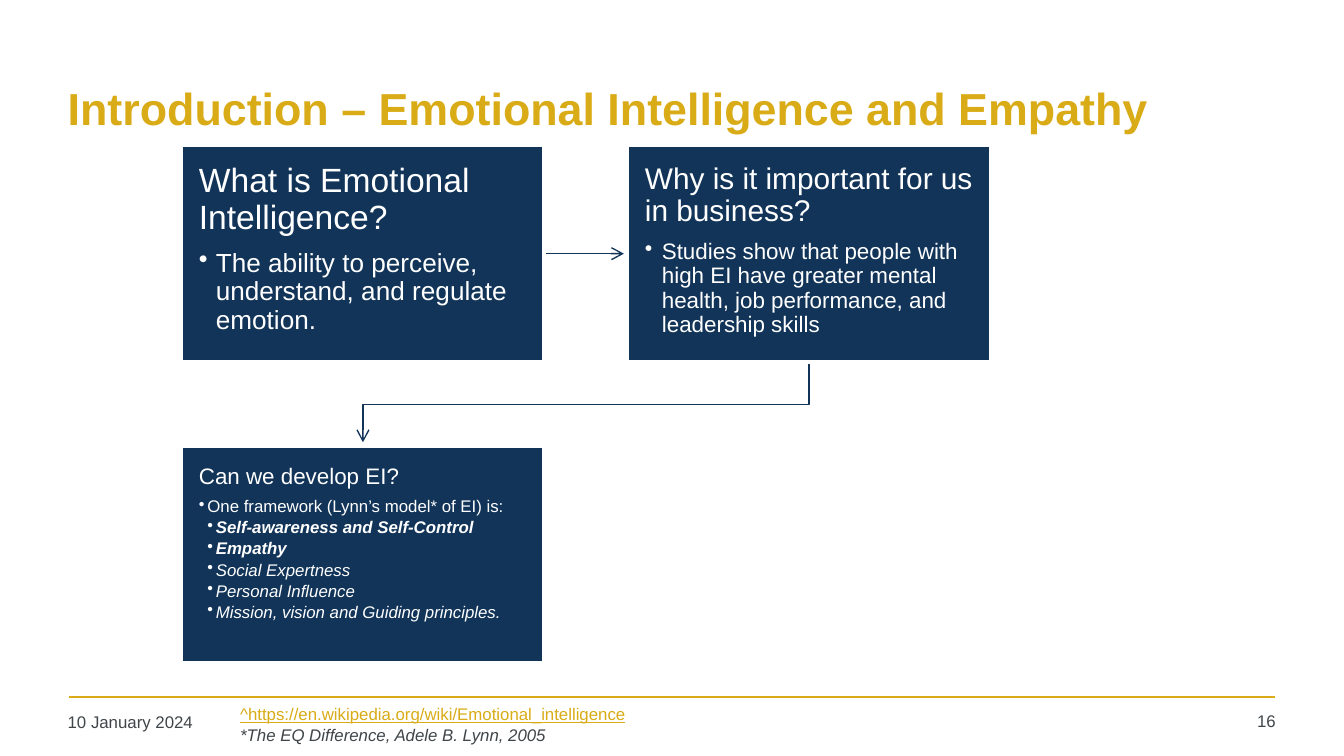
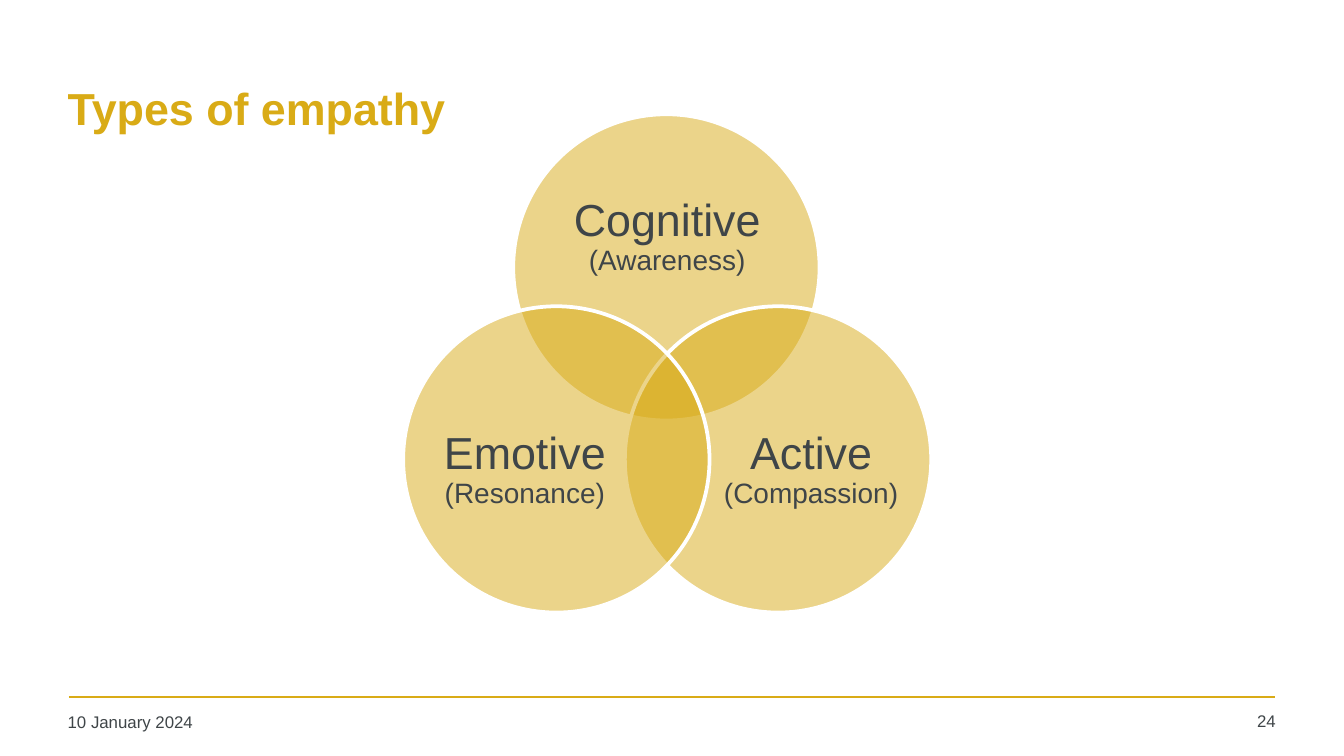
from lxml import etree
from pptx import Presentation
from pptx.dml.color import RGBColor
from pptx.enum.shapes import MSO_CONNECTOR as CONN, MSO_SHAPE as SHAPE
from pptx.enum.text import MSO_ANCHOR as ANCHOR, MSO_AUTO_SIZE as FIT, PP_ALIGN as ALIGN
from pptx.oxml.ns import qn
from pptx.util import Cm, Pt

# Shared style
FONT = "Arial"
GOLD, NAVY, GREY, WHITE = "D9AB16", "113458", "3F4548", "FFFFFF"
MARGIN = 1.09
INSET = (0.19, 0.1)
TITLE_ONLY = 5
LINE_FACTOR = 1.15

# Grid of cards
CARD_W, CARD_H = 6.86, 4.11
CARD_X, CARD_Y = 3.43, 2.74
STEP_X, STEP_Y = 8.43, 5.69
GAP = 0.07

CIRCLE = 5.79


def rgb(color):
    return RGBColor.from_string(color)


def cm(*values):
    return [Cm(v) for v in values]


def setup_frame(sp, inset=INSET, anchor=ANCHOR.TOP):
    tf = sp.text_frame
    tf.word_wrap = True
    tf.auto_size = FIT.NONE
    tf.vertical_anchor = anchor
    tf.margin_left = tf.margin_right = Cm(inset[0])
    tf.margin_top = tf.margin_bottom = Cm(inset[1])
    return tf


def add_run(p, text, size=9, color=GREY, bold=False, italic=False, underline=False):
    r = p.add_run()
    r.text = text
    r.font.name, r.font.size = FONT, Pt(size)
    r.font.bold, r.font.italic, r.font.underline = bold, italic, underline
    r.font.color.rgb = rgb(color)


def add_text(tf, text, align=ALIGN.LEFT, spacing=None, after=0, level=0,
             indent=None, **fmt):
    """Append a paragraph; `after` is a share of the line height."""
    p = tf.paragraphs[0]
    if p.runs:
        p = tf.add_paragraph()
    p.alignment, p.level = align, level
    if spacing:
        p.line_spacing = spacing
    if after:
        p.space_after = Pt(after * LINE_FACTOR * fmt["size"])
    if indent:
        left, hang = indent
        pPr = p._p.get_or_add_pPr()
        pPr.set("marL", str(Cm(left)))
        pPr.set("indent", str(-Cm(hang)))
        etree.SubElement(pPr, qn("a:buChar"), char="•")
    add_run(p, text, **fmt)
    return p


def add_box(s, x, y, w, h, **frame):
    return setup_frame(s.shapes.add_textbox(*cm(x, y, w, h)), **frame)


def add_filled(s, kind, x, y, w, h, color, alpha=None):
    sp = s.shapes.add_shape(kind, *cm(x, y, w, h))
    sp.shadow.inherit = False
    sp.fill.solid()
    sp.fill.fore_color.rgb = rgb(color)
    if alpha:
        clr = sp._element.spPr.find(".//" + qn("a:srgbClr"))
        etree.SubElement(clr, qn("a:alpha"), val=str(alpha * 1000))
    sp.line.color.rgb = rgb(WHITE)
    sp.line.width = Pt(2)
    return sp


def add_line(s, x1, y1, x2, y2, color, width):
    line = s.shapes.add_connector(CONN.STRAIGHT, *cm(x1, y1, x2, y2))
    line.line.color.rgb = rgb(color)
    line.line.width = Pt(width)
    etree.SubElement(line._element.spPr, qn("a:effectLst"))
    return line


def add_bent_line(s, points, color, width):
    points = [cm(*pt) for pt in points]
    builder = s.shapes.build_freeform(*points[0])
    builder.add_line_segments(points[1:], close=False)
    sp = builder.convert_to_shape()
    sp.shadow.inherit = False
    sp.fill.background()
    sp.line.color.rgb = rgb(color)
    sp.line.width = Pt(width)
    return sp


def make_arrow(sp):
    """Give the line an open arrowhead and send it behind the cards."""
    etree.SubElement(sp.line._get_or_add_ln(), qn("a:tailEnd"), type="arrow")
    el = sp._element
    el.getparent().insert(2, el)


def new_slide(prs, title, number):
    s = prs.slides.add_slide(prs.slide_layouts[TITLE_ONLY])
    # Title
    sp = s.shapes.title
    sp.left, sp.top, sp.width, sp.height = cm(MARGIN, 0.84, 23.04, 2.39)
    tf = setup_frame(sp, anchor=ANCHOR.MIDDLE)
    add_text(tf, title, size=24, color=GOLD, bold=True)
    # Footer
    add_line(s, 1.3, 13.18, 24.1, 13.18, GOLD, 1)
    add_text(add_box(s, MARGIN, 13.36, 5.59, 0.69), "10 January 2024")
    add_text(add_box(s, 22.5, 13.34, 1.8, 0.71), number, align=ALIGN.RIGHT)
    return s


def add_card(s, col, row, heading, heading_size, items, item_size, hang):
    """Items are (level, text, format) triples."""
    sp = add_filled(s, SHAPE.RECTANGLE, CARD_X + col * STEP_X, CARD_Y + row * STEP_Y,
                    CARD_W, CARD_H, NAVY)
    tf = setup_frame(sp, inset=(0.33, 0.36))
    add_text(tf, heading, size=heading_size, color=WHITE, spacing=0.9, after=0.35)
    for level, text, fmt in items:
        add_text(tf, text, size=item_size, color=WHITE, spacing=0.9, after=0.15,
                 level=level, indent=(level * hang, hang), **fmt)
    return sp


def add_circle(s, x, y, label_area, name, meaning):
    add_filled(s, SHAPE.OVAL, x, y, CIRCLE, CIRCLE, GOLD, alpha=50)
    tf = add_box(s, *label_area, inset=(0, 0), anchor=ANCHOR.MIDDLE)
    p = add_text(tf, name, align=ALIGN.CENTER, spacing=0.9, size=24)
    p.add_line_break()
    add_run(p, meaning, size=15)


def intelligence_slide(prs):
    s = new_slide(prs, "Introduction – Emotional Intelligence and Empathy", "16")
    # Cards
    what = add_card(s, 0, 0, "What is Emotional Intelligence?", 18, [
        (1, "The ability to perceive, understand, and regulate emotion.", {}),
    ], 14, 0.32)
    add_card(s, 1, 0, "Why is it important for us in business?", 16, [
        (1, "Studies show that people with high EI have greater mental health, "
            "job performance, and leadership skills", {}),
    ], 12, 0.32)
    strong, plain = {"bold": True, "italic": True}, {"italic": True}
    add_card(s, 0, 1, "Can we develop EI?", 12, [
        (1, "One framework (Lynn’s model* of EI) is:", {}),
        (2, "Self-awareness and Self-Control", strong),
        (2, "Empathy", strong),
        (2, "Social Expertness", plain),
        (2, "Personal Influence", plain),
        (2, "Mission, vision and Guiding principles.", plain),
    ], 9, 0.16)
    # Arrows
    mid_y = CARD_Y + CARD_H / 2
    arrow = add_line(s, CARD_X + CARD_W, mid_y, CARD_X + STEP_X - GAP, mid_y, NAVY, 0.75)
    arrow.begin_connect(what, 3)
    make_arrow(arrow)
    left, right = CARD_X + CARD_W / 2, CARD_X + STEP_X + CARD_W / 2
    bottom, bend = CARD_Y + CARD_H, 7.65
    make_arrow(add_bent_line(s, [(right, bottom), (right, bend), (left, bend),
                                 (left, CARD_Y + STEP_Y - GAP)], NAVY, 0.75))
    # References
    tf = add_box(s, 4.29, 13.18, 13.31, 1.02, inset=(0.25, 0.13))
    add_text(tf, "^https://en.wikipedia.org/wiki/Emotional_intelligence",
             color=GOLD, underline=True)
    add_text(tf, "*The EQ Difference, Adele B. Lynn, 2005", italic=True)


def empathy_slide(prs):
    s = new_slide(prs, "Types of empathy", "24")
    add_circle(s, 9.7, 2.16, (10.49, 3.18, 4.24, 2.62), "Cognitive", "(Awareness)")
    add_circle(s, 11.81, 5.79, (13.59, 7.29, 3.48, 3.2), "Active", "(Compassion)")
    add_circle(s, 7.62, 5.79, (8.18, 7.29, 3.48, 3.2), "Emotive", "(Resonance)")


def main():
    prs = Presentation()
    prs.slide_width, prs.slide_height = cm(25.4, 14.29)
    intelligence_slide(prs)
    empathy_slide(prs)
    prs.save("out.pptx")


if __name__ == "__main__":
    main()
